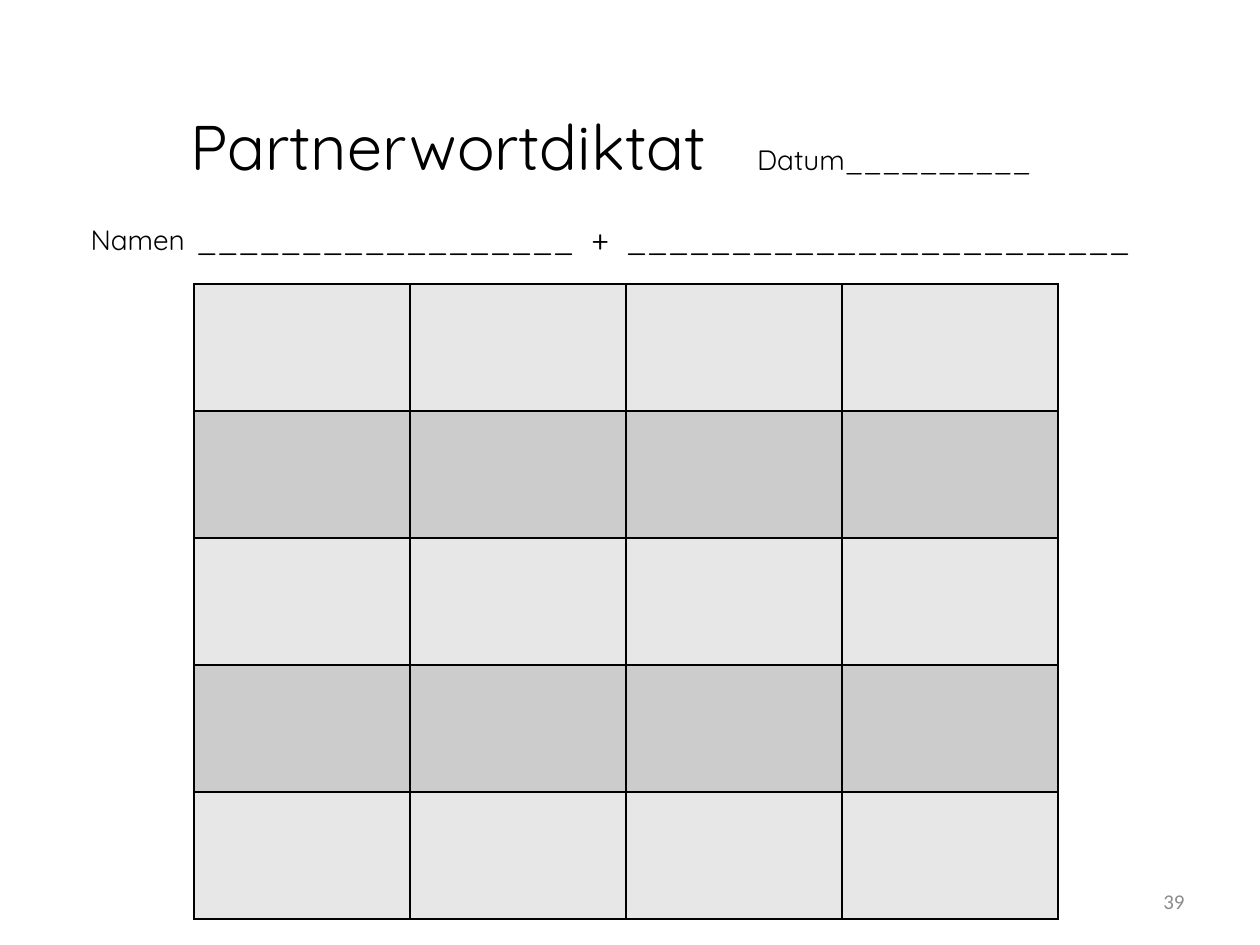
from lxml import etree
from pptx import Presentation
from pptx import util as u
from pptx.dml.color import RGBColor
from pptx.enum import text
from pptx.oxml.ns import qn

PX = 914400 // 126
BLACK = RGBColor(0x00, 0x00, 0x00)
GREY = RGBColor(0x8C, 0x8C, 0x8C)
LIGHT = RGBColor(0xE7, 0xE7, 0xE7)
DARK = RGBColor(0xCC, 0xCC, 0xCC)

prs = Presentation()
prs.slide_width, prs.slide_height = u.Inches(10), u.Inches(7.5)
slide = prs.slides.add_slide(prs.slide_layouts[6])


def add_box(x, y, w, h, align):
    box = slide.shapes.add_textbox(x * PX, y * PX, w * PX, h * PX)
    frame = box.text_frame
    frame.word_wrap = True
    para = frame.paragraphs[0]
    para.alignment = align
    return frame, para


# Page number
frame, para = add_box(903, 876, 294, 50, text.PP_ALIGN.RIGHT)
frame.vertical_anchor = text.MSO_ANCHOR.MIDDLE
para.text = "39"
para.font.name, para.font.size = "Calibri", u.Pt(12)
para.font.color.rgb = GREY

# Heading with date and name lines
frame, para = add_box(15, 55, 1160, 261, text.PP_ALIGN.CENTER)
frame.margin_top = 15 * PX
para.line_spacing = 1.5
para.font.name = "Quicksand"
para.font.color.rgb = BLACK
props = para._p.get_or_add_pPr()
props.set("marL", str(u.Inches(0.25)))
props.set("indent", "0")
parts = [
    ("Partnerwortdiktat", 36),
    ("\t", 24),
    ("Datum__________", 16),
    None,
    ("Namen", 16),
    (" ", 24),
    ("__________________  +  ________________________", 18),
]
for part in parts:
    if part is None:
        para.add_line_break()
        continue
    run = para.add_run()
    run.text = part[0]
    run.font.size = u.Pt(part[1])

# Word grid
ROWS, COLS, CELL_W, CELL_H = 5, 4, 216, 127
grid = slide.shapes.add_table(ROWS, COLS, 194 * PX, 284 * PX,
                              COLS * CELL_W * PX, ROWS * CELL_H * PX).table
for col in grid.columns:
    col.width = CELL_W * PX
for i, row in enumerate(grid.rows):
    row.height = CELL_H * PX
    for cell in row.cells:
        # Borders come before the fill in the cell properties
        tcpr = cell._tc.get_or_add_tcPr()
        for side in ("a:lnL", "a:lnR", "a:lnT", "a:lnB"):
            line = etree.SubElement(tcpr, qn(side), w=str(u.Pt(1)))
            fill = etree.SubElement(line, qn("a:solidFill"))
            etree.SubElement(fill, qn("a:srgbClr"), val=str(BLACK))
        cell.fill.solid()
        cell.fill.fore_color.rgb = DARK if i % 2 else LIGHT

prs.save("out.pptx")
